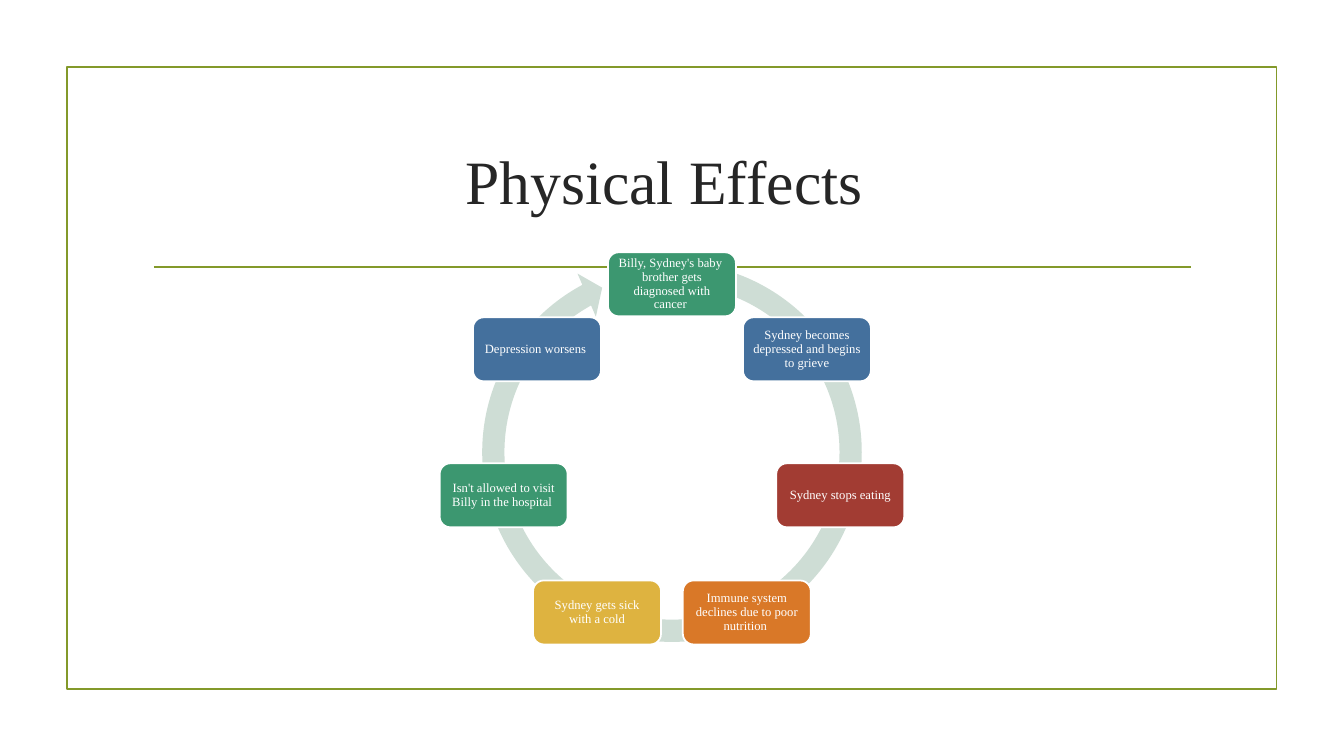
import math

import pptx
import pptx.dml.color
import pptx.enum.shapes
import pptx.enum.text
import pptx.util
from lxml import etree

Pt = pptx.util.Pt
SHAPES = pptx.enum.shapes.MSO_SHAPE
FONT = "Times New Roman"
COLOURS = {
    "frame": "83992A",
    "title": "262626",
    "ring": "CEDDD5",
    "white": "FFFFFF",
    "green": "3C9770",
    "blue": "44709D",
    "red": "A23C33",
    "orange": "D97828",
    "yellow": "DEB340",
}
STEPS = [
    ("Billy, Sydney's baby  brother gets diagnosed with cancer ", "green"),
    ("Sydney becomes depressed and begins to grieve", "blue"),
    ("Sydney stops eating", "red"),
    ("Immune system declines due to poor nutrition ", "orange"),
    ("Sydney gets sick with a cold", "yellow"),
    ("Isn't allowed to visit Billy in the hospital ", "green"),
    ("Depression worsens ", "blue"),
]
CENTRE_X, CENTRE_Y, RADIUS = 480, 326.4, 123.3
STEP_WIDTH, STEP_HEIGHT = 91.4, 45.7
RING_SIZE = 288.7
RING_ADJUSTMENTS = (0.055, 3.307, 144.892, 169.654, 0.058)


def colour(name):
    return pptx.dml.color.RGBColor.from_string(COLOURS[name])


def write_text(shape, text, *, size, color, inset, line_spacing=None):
    frame = shape.text_frame
    frame.word_wrap = True
    frame.auto_size = pptx.enum.text.MSO_AUTO_SIZE.NONE
    frame.vertical_anchor = pptx.enum.text.MSO_ANCHOR.MIDDLE
    frame.margin_left = frame.margin_right = Pt(inset)
    frame.margin_top = frame.margin_bottom = Pt(inset)
    paragraph = frame.paragraphs[0]
    paragraph.alignment = pptx.enum.text.PP_ALIGN.CENTER
    paragraph.line_spacing = line_spacing
    run = paragraph.add_run()
    run.text = text
    run.font.name = FONT
    run.font.size = Pt(size)
    run.font.color.rgb = colour(color)


def add_shape(slide, kind, left, top, width, height, fill=None, line=None):
    shape = slide.shapes.add_shape(kind, Pt(left), Pt(top), Pt(width), Pt(height))
    shape.shadow.inherit = False
    if fill:
        shape.fill.solid()
        shape.fill.fore_color.rgb = colour(fill)
    else:
        shape.fill.background()
    if line:
        shape.line.color.rgb = colour(line)
        shape.line.width = Pt(1.25)
    else:
        shape.line.fill.background()
    return shape


def add_rule(slide, left, right, y):
    rule = slide.shapes.add_connector(
        pptx.enum.shapes.MSO_CONNECTOR.STRAIGHT, Pt(left), Pt(y), Pt(right), Pt(y)
    )
    rule.line.color.rgb = colour("frame")
    rule.line.width = Pt(1.25)
    etree.SubElement(rule.element.spPr, pptx.oxml.ns.qn("a:effectLst"))


def add_title(slide, text):
    title = slide.shapes.title
    title.left, title.top = Pt(102), Pt(77)
    title.width, title.height = Pt(756), Pt(103)
    write_text(title, text, size=44, color="title", inset=4)


def add_ring(slide):
    ring = add_shape(
        slide, SHAPES.CIRCULAR_ARROW, CENTRE_X - RING_SIZE / 2, 178.6,
        RING_SIZE, RING_SIZE, fill="ring",
    )
    for index, value in enumerate(RING_ADJUSTMENTS):
        ring.adjustments[index] = value


def add_step(slide, index, text, fill):
    angle = 2 * math.pi * index / len(STEPS)
    left = CENTRE_X + RADIUS * math.sin(angle) - STEP_WIDTH / 2
    top = CENTRE_Y - RADIUS * math.cos(angle) - STEP_HEIGHT / 2
    step = add_shape(
        slide, SHAPES.ROUNDED_RECTANGLE, left, top, STEP_WIDTH, STEP_HEIGHT,
        fill=fill, line="white",
    )
    write_text(step, text, size=9, color="white", inset=5, line_spacing=0.9)


def main():
    presentation = pptx.Presentation()
    presentation.slide_width, presentation.slide_height = Pt(960), Pt(540)
    slide = presentation.slides.add_slide(presentation.slide_layouts[5])
    add_shape(slide, SHAPES.RECTANGLE, 47.8, 48, 864, 444, line="frame")
    add_rule(slide, 110, 850.5, 190.8)
    add_title(slide, "Physical Effects ")
    add_ring(slide)
    for index, (text, fill) in enumerate(STEPS):
        add_step(slide, index, text, fill)
    presentation.save("out.pptx")


if __name__ == "__main__":
    main()
